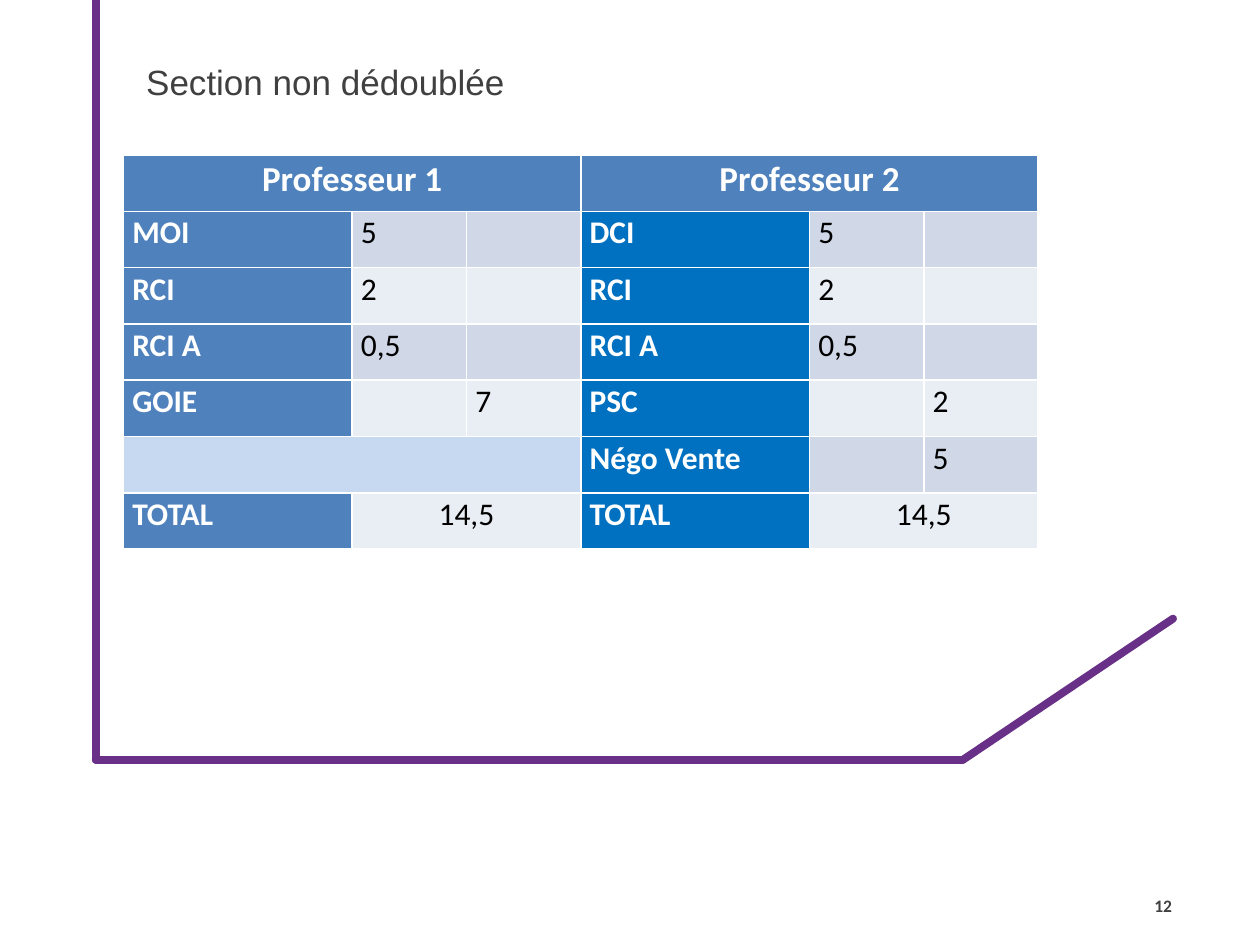
import pptx
import pptx.util
import pptx.dml.color
import pptx.enum.shapes
import pptx.enum.text
import pptx.oxml
import pptx.oxml.ns

COLS, ROWS = 1000, 750
UNIT = pptx.util.Inches(10) // COLS
ALIGN = pptx.enum.text.PP_ALIGN
HUES = {
    "frame": "683086", "text": "404040", "white": "FFFFFF", "black": "000000",
    "head": "4F81BD", "second": "0070C0", "void": "C6D9F1",
    "odd": "D0D8E8", "even": "E9EDF4",
}
SPLIT = (2, 1, 1, 2, 1, 1)
GRID = [
    ["Professeur 1", "", "", "Professeur 2", "", ""],
    ["MOI", "5", "", "DCI", "5", ""],
    ["RCI", "2", "", "RCI", "2", ""],
    ["RCI A", "0,5", "", "RCI A", "0,5", ""],
    ["GOIE", "", "7", "PSC", "", "2"],
    ["", "", "", "Négo Vente", "", "5"],
    ["TOTAL", "14,5", "", "TOTAL", "14,5", ""],
]
SPANS = {(0, 0): 3, (0, 3): 3, (5, 0): 3, (6, 1): 2, (6, 4): 2}


def hue(name):
    """Return the named colour."""
    return pptx.dml.color.RGBColor.from_string(HUES[name])


def span(*cells):
    """Turn grid units into slide lengths."""
    return [round(cell * UNIT) for cell in cells]


def write(frame, text, size=18, font="Calibri", color="text", bold=False,
          align=ALIGN.LEFT, lead=1.0):
    """Put formatted text in a frame."""
    line = frame.paragraphs[0]
    line.alignment = align
    line.line_spacing = lead
    run = line.add_run()
    run.text = text
    run.font.size = pptx.util.Pt(size)
    run.font.name = font
    run.font.bold = bold
    run.font.color.rgb = hue(color)


def border(slide, box):
    """Draw the open frame with its rising corner."""
    left, top, wide, high = box
    low = top + high
    bend = (left + wide * 0.805, low)
    knots = [(left, top), (left, low), bend, (left + wide, low - 112)]
    for start, end in zip(knots, knots[1:]):
        link = slide.shapes.add_connector(
            pptx.enum.shapes.MSO_CONNECTOR.STRAIGHT, *span(*start, *end))
        link.line.color.rgb = hue("frame")
        link.line.width = pptx.util.Pt(4.5)
        link.line._get_or_add_ln().set("cap", "rnd")
        link._element.spPr.append(pptx.oxml.parse_xml(
            "<a:effectLst %s/>" % pptx.oxml.ns.nsdecls("a")))


def heading(slide, box):
    """Place the slide title."""
    title = slide.shapes.title
    title.left, title.top, title.width, title.height = span(*box)
    title.text_frame.vertical_anchor = pptx.enum.text.MSO_ANCHOR.MIDDLE
    write(title.text_frame, "Section non dédoublée", size=20, font="Arial")


def shade(row, col):
    """Name the fill of a table cell."""
    if row == 0:
        return "head"
    if (row, col) == (5, 0):
        return "void"
    if col % 3 == 0:
        return "second" if col else "head"
    return "odd" if row % 2 else "even"


def hours(slide, box):
    """Build the table of teaching hours."""
    table = slide.shapes.add_table(len(GRID), len(SPLIT), *span(*box)).table
    for col, part in zip(table.columns, SPLIT):
        col.width = span(box[2] * part / sum(SPLIT))[0]
    for (row, col), count in SPANS.items():
        table.cell(row, col).merge(table.cell(row, col + count - 1))
    for row, texts in enumerate(GRID):
        for col, text in enumerate(texts):
            cell = table.cell(row, col)
            cell.fill.solid()
            cell.fill.fore_color.rgb = hue(shade(row, col))
            cell.margin_left, cell.margin_right = span(7, 7)
            cell.margin_top = cell.margin_bottom = 0
            if text:
                label = col % 3 == 0
                write(cell.text_frame, text, size=18 if row else 20, bold=label,
                      color="white" if label else "black", lead=1.07,
                      align=ALIGN.CENTER if (row, col) in SPANS else ALIGN.LEFT)


def folio(slide, box):
    """Place the page number."""
    frame = slide.shapes.add_textbox(*span(*box)).text_frame
    frame.word_wrap = True
    frame.vertical_anchor = pptx.enum.text.MSO_ANCHOR.MIDDLE
    write(frame, "12", size=10, bold=True, align=ALIGN.RIGHT)


def main():
    """Build and save the slide."""
    deck = pptx.Presentation()
    deck.slide_width, deck.slide_height = span(COLS, ROWS)
    slide = deck.slides.add_slide(deck.slide_layouts[5])
    border(slide, (76, 0, 855, 603))
    heading(slide, (106, 21, 850, 87))
    folio(slide, (896, 699, 44, 40))
    hours(slide, (98, 123, 726, 313))
    deck.save("out.pptx")


if __name__ == "__main__":
    main()
